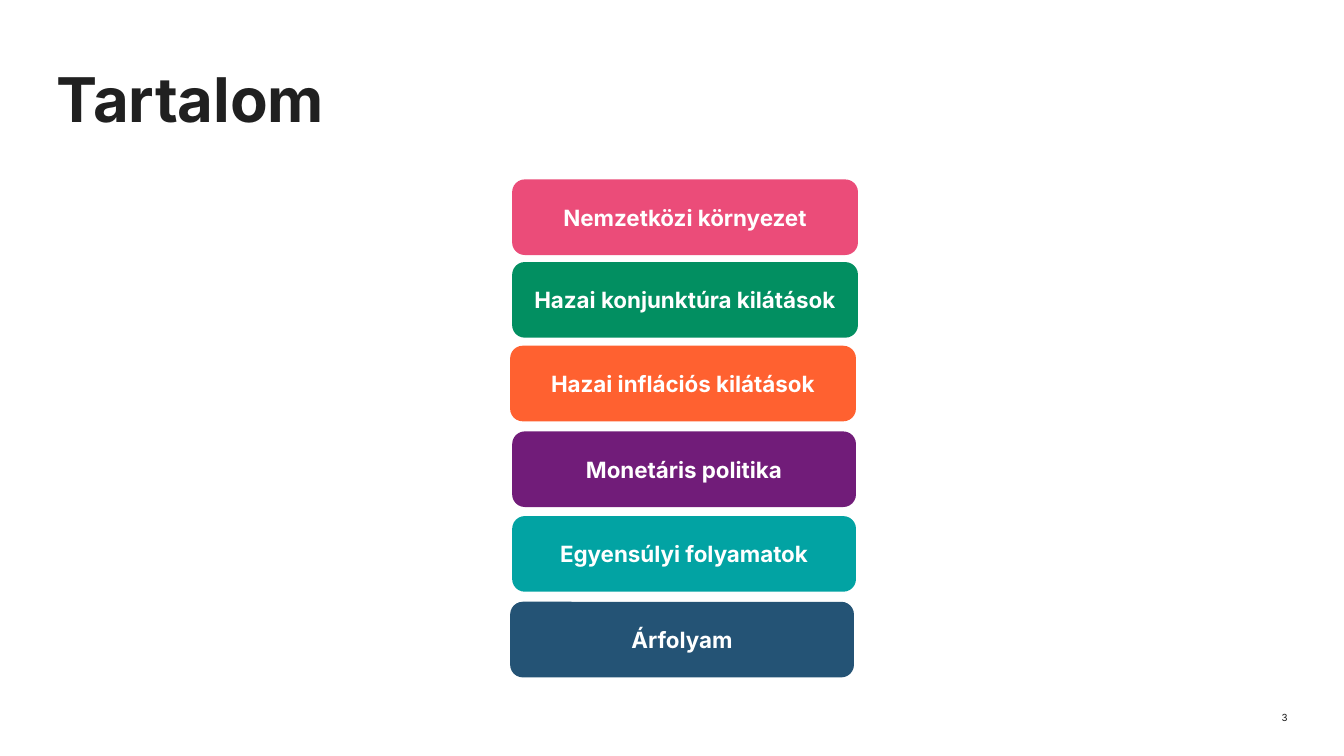
import dataclasses

import pptx
import pptx.dml.color
import pptx.enum.shapes
import pptx.enum.text
import pptx.util

Inches = pptx.util.Inches
RGBColor = pptx.dml.color.RGBColor
Align = pptx.enum.text.PP_ALIGN

FONT = "Inter"
DARK = RGBColor(0x20, 0x20, 0x20)
WHITE = RGBColor(0xFF, 0xFF, 0xFF)
PINK = RGBColor(0xEB, 0x4C, 0x79)
GREEN = RGBColor(0x02, 0x8F, 0x61)
ORANGE = RGBColor(0xFF, 0x61, 0x30)
PURPLE = RGBColor(0x71, 0x1C, 0x79)
TEAL = RGBColor(0x02, 0xA3, 0xA3)
NAVY = RGBColor(0x24, 0x53, 0x75)
HEIGHT = 0.75


@dataclasses.dataclass(frozen=True)
class Topic:
    text: str
    fill: RGBColor
    left: float
    top: float
    width: float


TOPICS = (
    Topic("Nemzetközi környezet", PINK, 5.08, 1.78, 3.43),
    Topic("Hazai konjunktúra kilátások", GREEN, 5.08, 2.6, 3.43),
    Topic("Hazai inflációs kilátások", ORANGE, 5.06, 3.43, 3.43),
    Topic("Monetáris politika", PURPLE, 5.08, 4.28, 3.41),
    Topic("Egyensúlyi folyamatok", TEAL, 5.08, 5.12, 3.41),
    Topic("Árfolyam", NAVY, 5.06, 5.97, 3.41),
)


def write(frame, text: str, size: int, color: RGBColor, align: Align, bold: bool):
    """Fill a text frame with one styled paragraph and return the paragraph."""
    frame.word_wrap = True
    frame.text = text
    line = frame.paragraphs[0]
    line.alignment = align
    font = line.runs[0].font
    font.name = FONT
    font.size = pptx.util.Pt(size)
    font.bold = bold
    font.color.rgb = color
    return line


def add_label(slide, left: float, top: float, width: float, height: float):
    """Add a text box without margins and return its text frame."""
    box = slide.shapes.add_textbox(
        Inches(left), Inches(top), Inches(width), Inches(height)
    )
    frame = box.text_frame
    frame.margin_left = frame.margin_right = 0
    frame.margin_top = frame.margin_bottom = 0
    return frame


def add_topic(slide, topic: Topic) -> None:
    shape = slide.shapes.add_shape(
        pptx.enum.shapes.MSO_SHAPE.ROUNDED_RECTANGLE,
        Inches(topic.left), Inches(topic.top), Inches(topic.width), Inches(HEIGHT),
    )
    shape.shadow.inherit = False
    shape.fill.solid()
    shape.fill.fore_color.rgb = topic.fill
    shape.line.fill.background()
    frame = shape.text_frame
    frame.vertical_anchor = pptx.enum.text.MSO_ANCHOR.MIDDLE
    write(frame, topic.text, 16, WHITE, Align.CENTER, True)


def main() -> None:
    deck = pptx.Presentation()
    deck.slide_width = Inches(13.33)
    deck.slide_height = Inches(7.5)
    slide = deck.slides.add_slide(deck.slide_layouts[6])

    title = add_label(slide, 0.56, 0.68, 12.2, 0.83)
    write(title, "Tartalom", 44, DARK, Align.LEFT, True).line_spacing = 0.92
    number = add_label(slide, 12.36, 7.06, 0.41, 0.14)
    write(number, "3", 7, DARK, Align.RIGHT, False)
    for topic in TOPICS:
        add_topic(slide, topic)

    deck.save("out.pptx")


if __name__ == "__main__":
    main()
